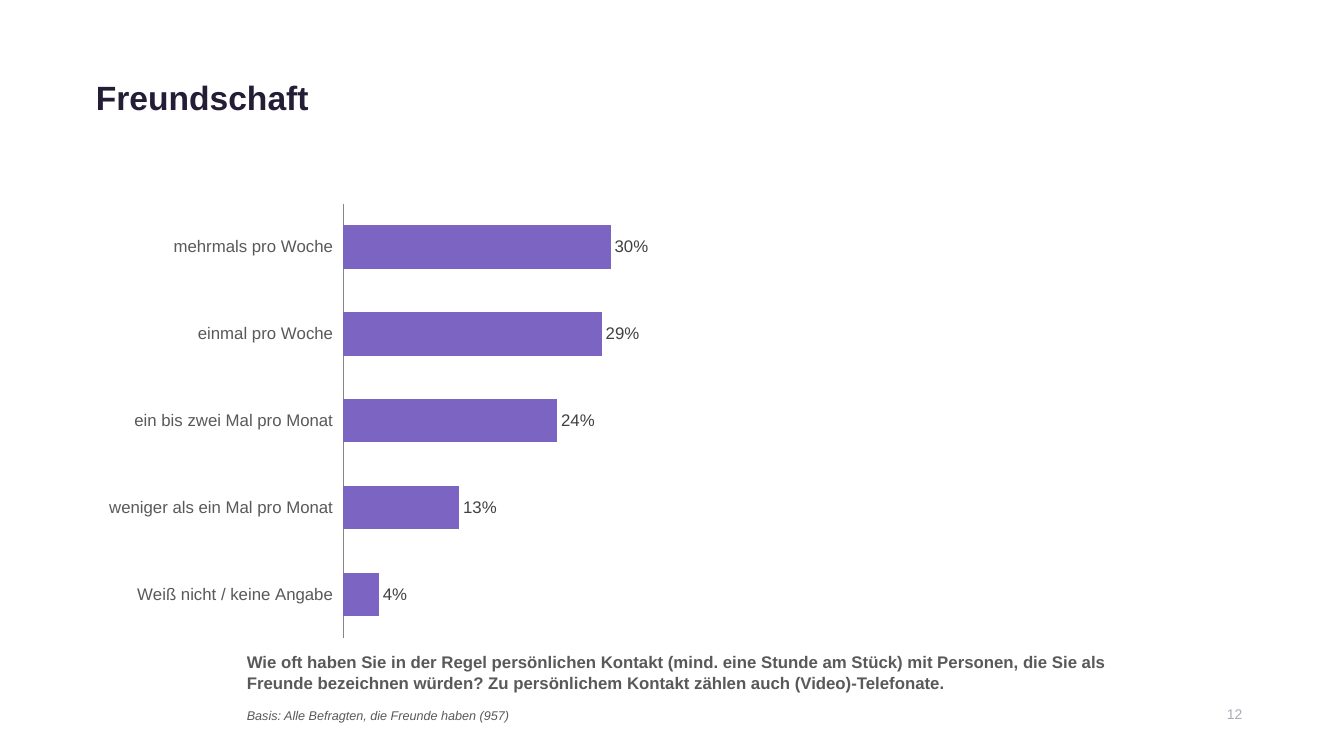
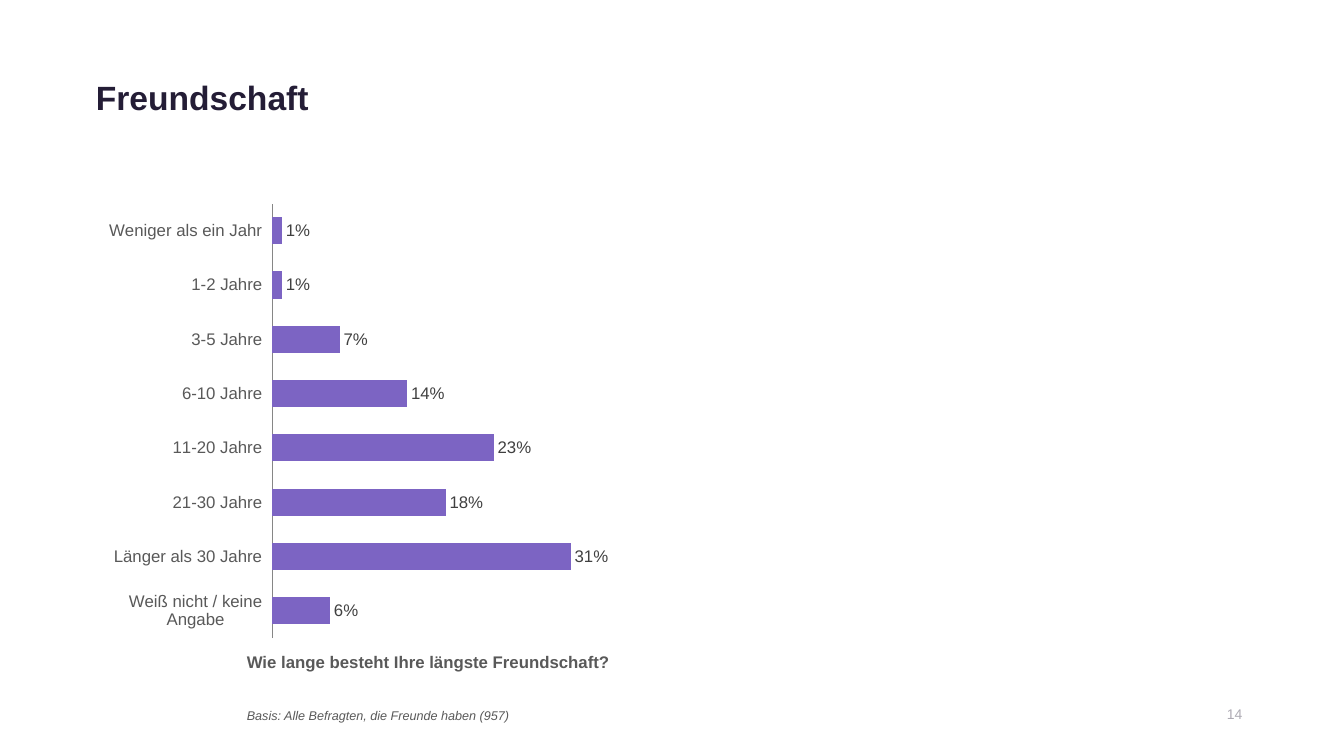
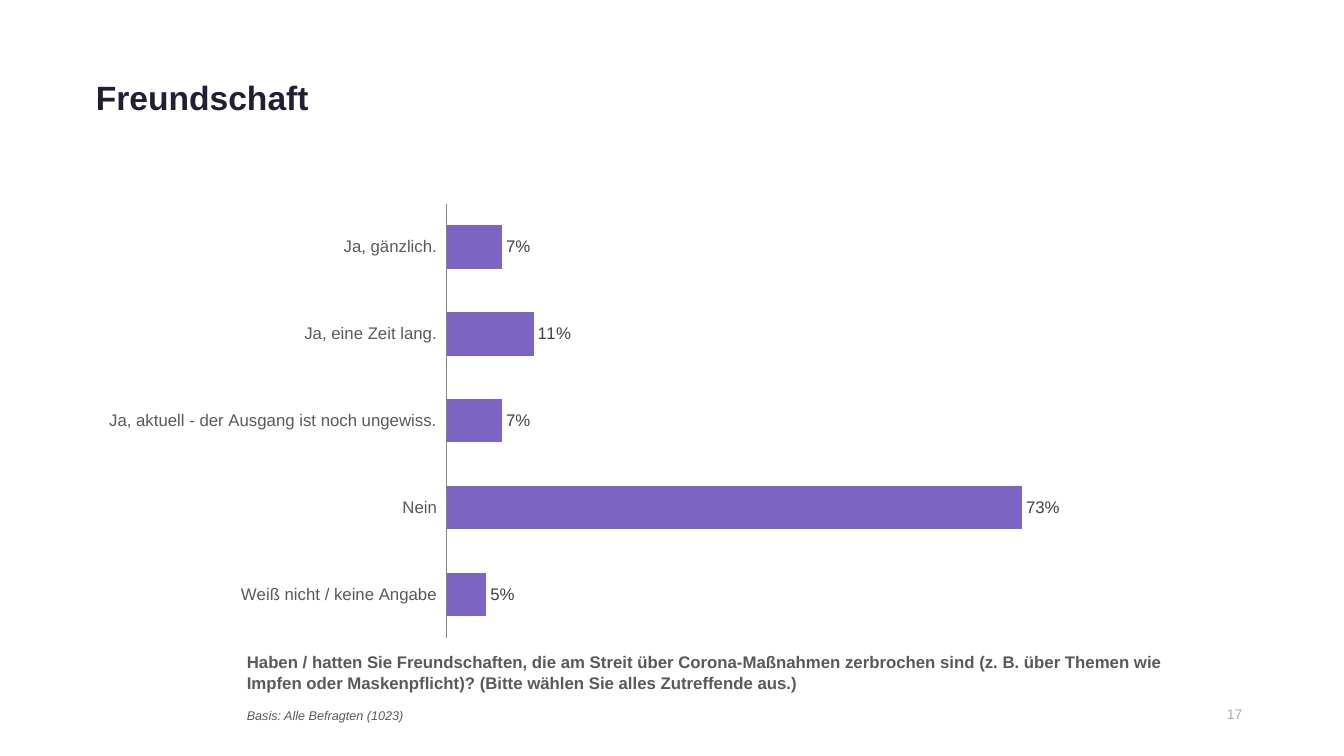
import pptx
import pptx.chart.data
import pptx.dml.color
import pptx.enum.chart
import pptx.enum.text
import pptx.oxml
import pptx.oxml.ns
import pptx.util
from pptx.util import Inches

FONT = "Arial"
TITLE_COLOR = "241D36"
NUMBER_COLOR = "332C41"
TEXT_COLOR = "595959"
LABEL_COLOR = "404040"
BAR_COLOR = "7C64C3"
AXIS_COLOR = "868686"

TITLE = "Freundschaft"
FRIENDS_BASE = "Basis: Alle Befragten, die Freunde haben (957)"

SURVEY_PAGES = [
    {
        "number": "12",
        "question": "Wie oft haben Sie in der Regel persönlichen Kontakt (mind. eine Stunde am Stück) "
                    "mit Personen, die Sie als Freunde bezeichnen würden? "
                    "Zu persönlichem Kontakt zählen auch (Video)-Telefonate.",
        "base": FRIENDS_BASE,
        "answers": {
            "mehrmals pro Woche": 0.30,
            "einmal pro Woche": 0.29,
            "ein bis zwei Mal pro Monat": 0.24,
            "weniger als ein Mal pro Monat": 0.13,
            "Weiß nicht / keine Angabe": 0.04,
        },
    },
    {
        "number": "14",
        "question": "Wie lange besteht Ihre längste Freundschaft?",
        "base": FRIENDS_BASE,
        "answers": {
            "Weniger als ein Jahr": 0.01,
            "1-2 Jahre": 0.01,
            "3-5 Jahre": 0.07,
            "6-10 Jahre": 0.14,
            "11-20 Jahre": 0.23,
            "21-30 Jahre": 0.18,
            "Länger als 30 Jahre": 0.31,
            "Weiß nicht / keine Angabe": 0.06,
        },
    },
    {
        "number": "17",
        "question": "Haben / hatten Sie Freundschaften, die am Streit über Corona-Maßnahmen zerbrochen sind "
                    "(z. B. über Themen wie Impfen oder Maskenpflicht)? "
                    "(Bitte wählen Sie alles Zutreffende aus.)",
        "base": "Basis: Alle Befragten (1023)",
        "answers": {
            "Ja, gänzlich.": 0.07,
            "Ja, eine Zeit lang.": 0.11,
            "Ja, aktuell - der Ausgang ist noch ungewiss.": 0.07,
            "Nein": 0.73,
            "Weiß nicht / keine Angabe": 0.05,
        },
    },
]

# Left, top, width, height in inches
TITLE_AREA = (0.85, 0.71, 11.63, 0.5)
CHART_AREA = (0.85, 1.93, 11.63, 4.49)
QUESTION_AREA = (2.35, 6.42, 9.33, 0.47)
BASE_AREA = (2.35, 6.97, 9.33, 0.27)
NUMBER_AREA = (11.78, 6.95, 0.64, 0.27)


def rgb(color):
    return pptx.dml.color.RGBColor.from_string(color)


def style_font(font, size, color, bold=False, italic=False):
    font.name = FONT
    font.size = pptx.util.Pt(size)
    font.color.rgb = rgb(color)
    font.bold = bold
    font.italic = italic


def add_text(page, area, text, size, color, **emphasis):
    box = page.shapes.add_textbox(*map(Inches, area))
    box.text_frame.word_wrap = True
    para = box.text_frame.paragraphs[0]
    para.text = text
    style_font(para.font, size, color, **emphasis)
    return para


def add_page_number(page, number):
    para = add_text(page, NUMBER_AREA, number, 10, NUMBER_COLOR)
    para.alignment = pptx.enum.text.PP_ALIGN.RIGHT
    span = para.runs[0]
    style_font(span.font, 10, NUMBER_COLOR)
    for color in span.font.fill._xPr.iter(pptx.oxml.ns.qn("a:srgbClr")):
        alpha = pptx.oxml.parse_xml(f'<a:alpha {pptx.oxml.ns.nsdecls("a")} val="40000"/>')
        color.append(alpha)


def set_title(page):
    title = page.shapes.title
    title.left, title.top, title.width, title.height = map(Inches, TITLE_AREA)
    frame = title.text_frame
    frame.text = TITLE
    frame.vertical_anchor = pptx.enum.text.MSO_ANCHOR.MIDDLE
    frame.auto_size = pptx.enum.text.MSO_AUTO_SIZE.NONE
    para = frame.paragraphs[0]
    para.alignment = pptx.enum.text.PP_ALIGN.LEFT
    style_font(para.font, 24, TITLE_COLOR, bold=True)


def add_answer_chart(page, answers):
    data = pptx.chart.data.CategoryChartData(number_format="0%")
    data.categories = list(answers)
    data.add_series("Series 1", list(answers.values()))
    chart = page.shapes.add_chart(
        pptx.enum.chart.XL_CHART_TYPE.BAR_CLUSTERED, *map(Inches, CHART_AREA), data
    ).chart
    chart.has_legend = False
    chart.has_title = False
    style_font(chart.font, 18, "000000")

    answer_axis = chart.category_axis
    answer_axis.reverse_order = True
    answer_axis.has_major_gridlines = False
    answer_axis.major_tick_mark = pptx.enum.chart.XL_TICK_MARK.NONE
    answer_axis.tick_label_position = pptx.enum.chart.XL_TICK_LABEL_POSITION.LOW
    answer_axis.format.line.color.rgb = rgb(AXIS_COLOR)
    style_font(answer_axis.tick_labels.font, 12, TEXT_COLOR)

    share_axis = chart.value_axis
    share_axis.visible = False
    share_axis.has_major_gridlines = False
    share_axis.minimum_scale = 0
    share_axis.maximum_scale = 1
    share_axis.major_unit = 0.1

    plot = chart.plots[0]
    plot.gap_width = 100
    plot.overlap = -10
    plot.vary_by_categories = False
    bars = plot.series[0]
    bars.format.fill.solid()
    bars.format.fill.fore_color.rgb = rgb(BAR_COLOR)
    labels = bars.data_labels
    labels.show_value = True
    labels.position = pptx.enum.chart.XL_LABEL_POSITION.OUTSIDE_END
    labels.number_format = "0%"
    labels.number_format_is_linked = False
    style_font(labels.font, 12, LABEL_COLOR)


def main():
    deck = pptx.Presentation()
    deck.slide_width = Inches(13.33)
    deck.slide_height = Inches(7.5)
    title_only = deck.slide_layouts[5]
    for survey in SURVEY_PAGES:
        page = deck.slides.add_slide(title_only)
        set_title(page)
        add_page_number(page, survey["number"])
        add_text(page, QUESTION_AREA, survey["question"], 12, TEXT_COLOR, bold=True)
        add_text(page, BASE_AREA, survey["base"], 9, TEXT_COLOR, italic=True)
        add_answer_chart(page, survey["answers"])
    deck.save("out.pptx")


if __name__ == "__main__":
    main()
